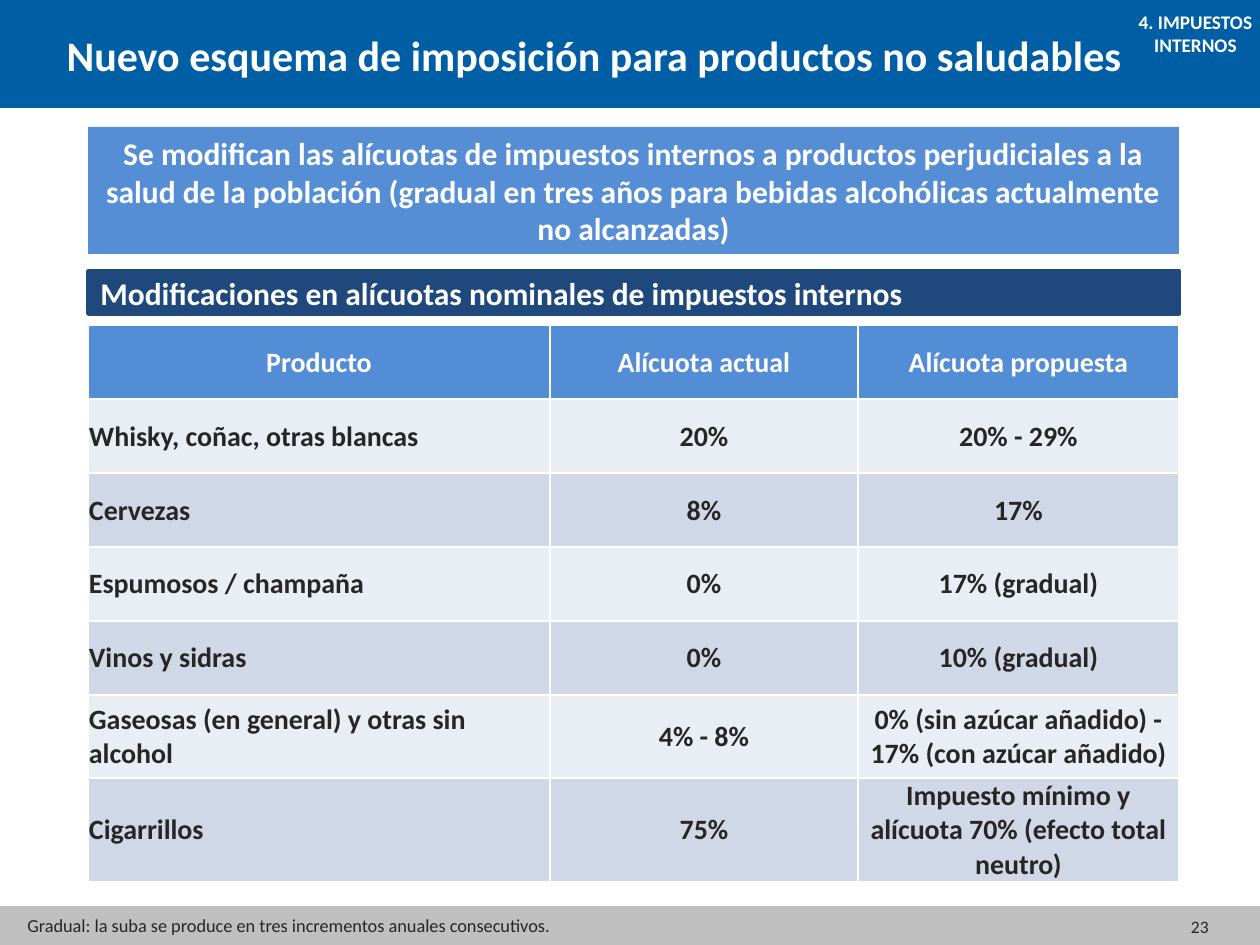
from typing import NamedTuple

from lxml import etree
from pptx import Presentation
from pptx.dml.color import RGBColor
from pptx.enum import shapes, text
from pptx.oxml import ns
from pptx.util import Emu, Pt

EMU_PER_PX = 914400 / 126
FONT = "Calibri"
WHITE, INK = "FFFFFF", "262626"
HEADER, LIGHT, DARK = "538DD5", "E9EDF4", "D0D8E8"
LEFT, CENTER, RIGHT = text.PP_ALIGN.LEFT, text.PP_ALIGN.CENTER, text.PP_ALIGN.RIGHT
TOP, MIDDLE = text.MSO_ANCHOR.TOP, text.MSO_ANCHOR.MIDDLE


class Area(NamedTuple):
    left: int
    top: int
    width: int
    height: int


class Panel(NamedTuple):
    area: Area
    fill: str
    line: str | None = None


class Rate(NamedTuple):
    product: str
    current: str
    proposed: str


TITLE_BAND = Panel(Area(0, 0, 1260, 108), "005EA4")
FOOTER_BAND = Panel(Area(0, 908, 1260, 37), "BFBFBF", "BFBFBF")
SUMMARY = Panel(Area(88, 127, 1091, 127), "558ED5")
SUBTITLE = Panel(Area(88, 271, 1091, 43), "1F497D", "1F497D")
TABLE_AREA = Area(88, 325, 1091, 556)
COLUMN_WIDTHS = (462, 308, 321)
ROW_HEIGHTS = (74,) * 5 + (83, 83)
RATES = (
    Rate("Producto", "Alícuota actual", "Alícuota propuesta"),
    Rate("Whisky, coñac, otras blancas", "20%", "20% - 29%"),
    Rate("Cervezas", "8%", "17%"),
    Rate("Espumosos / champaña", "0%", "17% (gradual)"),
    Rate("Vinos y sidras", "0%", "10% (gradual)"),
    Rate("Gaseosas (en general) y otras sin alcohol", "4% - 8%",
         "0% (sin azúcar añadido) - 17% (con azúcar añadido)"),
    Rate("Cigarrillos", "75%", "Impuesto mínimo y alícuota 70% (efecto total neutro)"),
)


def px(length: int) -> Emu:
    return Emu(round(length * EMU_PER_PX))


def place(area: Area) -> list[Emu]:
    return [px(length) for length in area]


def paint(fill, color: str) -> None:
    fill.solid()
    fill.fore_color.rgb = RGBColor.from_string(color)


def write(frame, *lines: str, size: float, color: str = WHITE, bold: bool = False,
          align=LEFT, anchor=TOP, wrap: bool = True) -> None:
    frame.word_wrap = wrap
    frame.auto_size = text.MSO_AUTO_SIZE.NONE
    frame.vertical_anchor = anchor
    for index, line in enumerate(lines):
        para = frame.paragraphs[0] if index == 0 else frame.add_paragraph()
        para.alignment = align
        span = para.add_run()
        span.text = line
        span.font.name = FONT
        span.font.size = Pt(size)
        span.font.bold = bold
        span.font.color.rgb = RGBColor.from_string(color)


def add_panel(page, panel: Panel):
    box = page.shapes.add_shape(shapes.MSO_SHAPE.RECTANGLE, *place(panel.area))
    box.shadow.inherit = False
    paint(box.fill, panel.fill)
    if panel.line:
        paint(box.line.fill, panel.line)
        box.line.width = Pt(2)
    else:
        box.line.fill.background()
    return box


def add_label(page, area: Area, label: str, **style) -> None:
    write(page.shapes.add_textbox(*place(area)).text_frame, label, **style)


def add_title(page, area: Area, label: str) -> None:
    title = page.shapes.title
    title.left, title.top, title.width, title.height = place(area)
    write(title.text_frame, label, size=24, bold=True)
    for band in (TITLE_BAND, FOOTER_BAND):
        title.element.addprevious(add_panel(page, band).element)


def set_borders(cell, color: str) -> None:
    properties = cell._tc.get_or_add_tcPr()
    for index, side in enumerate(("lnL", "lnR", "lnT", "lnB")):
        line = etree.Element(ns.qn(f"a:{side}"), w=str(Pt(1)))
        fill = etree.SubElement(line, ns.qn("a:solidFill"))
        etree.SubElement(fill, ns.qn("a:srgbClr"), val=color)
        properties.insert(index, line)


def format_cell(cell, label: str, fill: str, color: str, align) -> None:
    cell.margin_left = cell.margin_right = cell.margin_top = px(1)
    cell.margin_bottom = 0
    cell.vertical_anchor = MIDDLE
    paint(cell.fill, fill)
    set_borders(cell, WHITE)
    para = cell.text_frame.paragraphs[0]
    para.alignment = align
    span = para.add_run()
    span.text = label
    span.font.name, span.font.size, span.font.bold = FONT, Pt(16), True
    span.font.color.rgb = RGBColor.from_string(color)


def add_rates(page) -> None:
    table = page.shapes.add_table(len(RATES), len(COLUMN_WIDTHS), *place(TABLE_AREA)).table
    for column, width in zip(table.columns, COLUMN_WIDTHS):
        column.width = px(width)
    for row, height in zip(table.rows, ROW_HEIGHTS):
        row.height = px(height)
    for r, rate in enumerate(RATES):
        fill = HEADER if r == 0 else (DARK, LIGHT)[r % 2]
        for c, label in enumerate(rate):
            align = LEFT if r and c == 0 else CENTER
            format_cell(table.cell(r, c), label, fill, INK if r else WHITE, align)


def main() -> None:
    deck = Presentation()
    deck.slide_width, deck.slide_height = px(1260), px(945)
    page = deck.slides.add_slide(deck.slide_layouts[5])
    add_title(page, Area(54, 23, 1191, 63),
              "Nuevo esquema de imposición para productos no saludables")
    add_label(page, Area(927, 902, 294, 50), "23",
              size=10, color=INK, align=RIGHT, anchor=MIDDLE)
    add_rates(page)
    write(add_panel(page, SUBTITLE).text_frame,
          "Modificaciones en alícuotas nominales de impuestos internos",
          size=18, bold=True, anchor=MIDDLE)
    write(add_panel(page, SUMMARY).text_frame,
          "Se modifican las alícuotas de impuestos internos a productos perjudiciales a la",
          "salud de la población (gradual en tres años para bebidas alcohólicas "
          "actualmente no alcanzadas)",
          size=18, bold=True, align=CENTER, anchor=MIDDLE)
    add_label(page, Area(1116, 4, 159, 59), "4. IMPUESTOS INTERNOS",
              size=11, bold=True, align=CENTER)
    add_label(page, Area(15, 908, 553, 35),
              "Gradual: la suba se produce en tres incrementos anuales consecutivos.",
              size=10.5, color=INK, wrap=False)
    deck.save("out.pptx")


if __name__ == "__main__":
    main()
